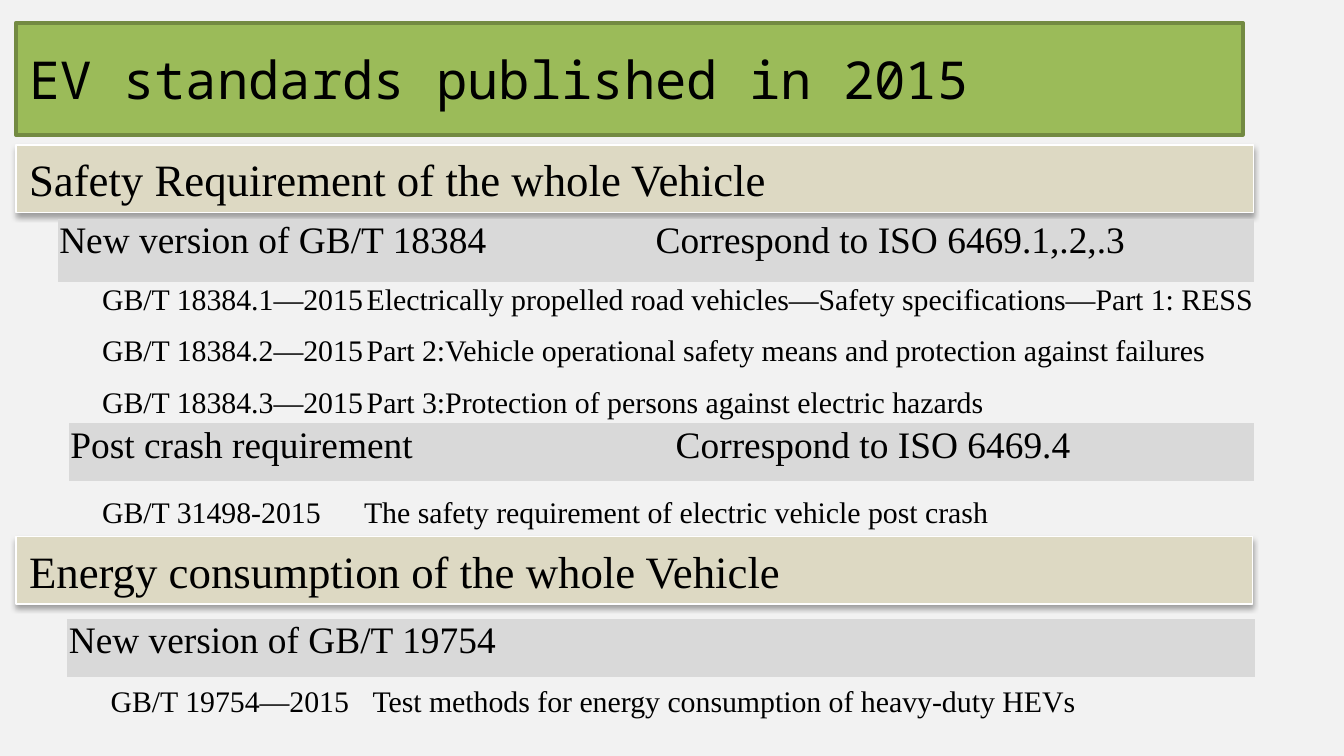
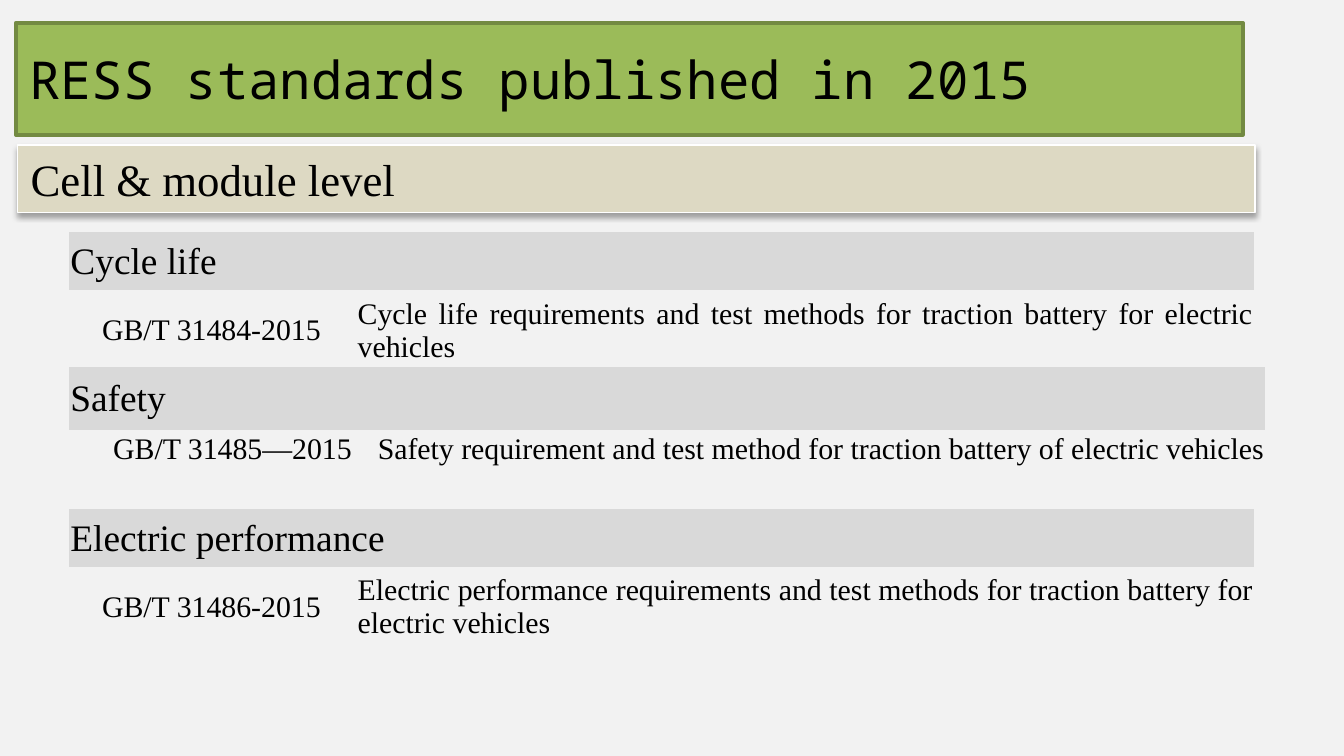
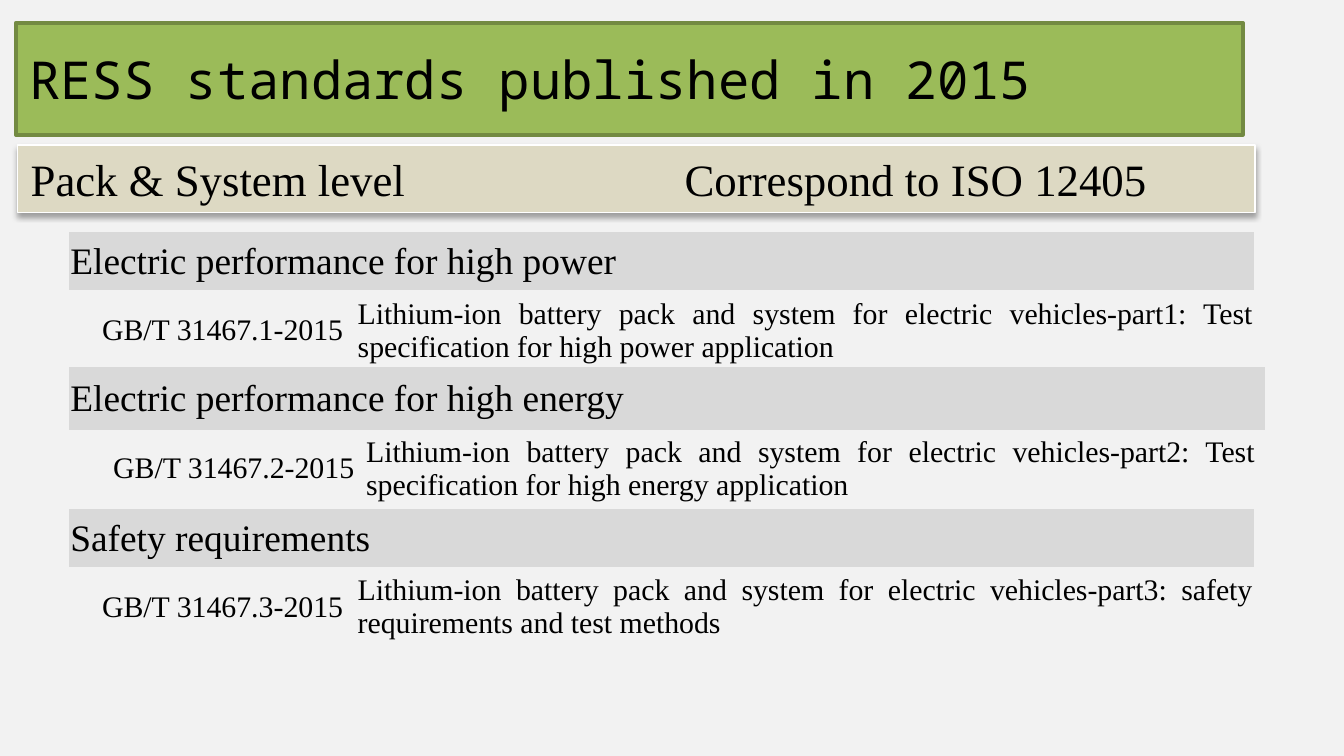
import pptx
import pptx.util
import pptx.dml.color
import pptx.enum.shapes
import pptx.enum.text
import pptx.oxml
import pptx.oxml.ns

Cm = pptx.util.Cm
Pt = pptx.util.Pt
ALIGN = pptx.enum.text.PP_ALIGN
ANCHOR = pptx.enum.text.MSO_ANCHOR

BACKGROUND = "F2F2F2"
GREEN, GREEN_EDGE = "9BBB59", "738A42"
SAND, WHITE = "DDD9C3", "FFFFFF"
GREY = "D9D9D9"
BLACK = "000000"
TITLE_FONT, BODY_FONT = "Noto Sans Mono", "Times New Roman"
NO_STYLE = "{2D5ABB26-0587-4C30-8999-92F81FD0307C}"
NS = pptx.oxml.ns.nsdecls("a")

# Left, top, width, height of the three headings on a RESS slide, in cm
RESS_HEADINGS = [(1.3, 4.39, 22.4, 1.09), (1.3, 6.93, 22.6, 1.19), (1.3, 9.63, 22.4, 1.09)]
RESS_COLS = (4.83, 16.99)


def rgb(value):
    return pptx.dml.color.RGBColor.from_string(value)


def paint(shape, fill, line, width):
    shape.fill.solid()
    shape.fill.fore_color.rgb = rgb(fill)
    shape.line.color.rgb = rgb(line)
    shape.line.width = Pt(width)


def write(tf, text, size, font=BODY_FONT, align=ALIGN.LEFT, tab=None):
    """Put one paragraph in a frame; tab is the stop (cm) of its second part."""
    p = tf.paragraphs[0]
    p.text = text
    p.alignment = align
    if tab:
        p._p.get_or_add_pPr().append(pptx.oxml.parse_xml(
            f'<a:tabLst {NS}><a:tab pos="{Cm(tab)}" algn="l"/></a:tabLst>'))
    for r in p.runs:
        r.font.size = Pt(size)
        r.font.name = font
        r.font.color.rgb = rgb(BLACK)


def fit_frame(tf):
    tf.word_wrap = True
    tf.auto_size = pptx.enum.text.MSO_AUTO_SIZE.SHAPE_TO_FIT_TEXT
    tf.vertical_anchor = ANCHOR.MIDDLE


def add_titled_slide(prs, text):
    s = prs.slides.add_slide(prs.slide_layouts[5])
    title = s.shapes.title
    title.left, title.top, title.width, title.height = Cm(0.3), Cm(0.69), Cm(23.19), Cm(1.6)
    title._element.spPr.xfrm.addnext(pptx.oxml.parse_xml(
        f'<a:prstGeom {NS} prst="roundRect"><a:avLst/></a:prstGeom>'))
    paint(title, GREEN, GREEN_EDGE, 2)
    fit_frame(title.text_frame)
    write(title.text_frame, text, 28, TITLE_FONT)
    return s


def add_band(s, left, top, width, text, tab=None):
    sp = s.shapes.add_shape(pptx.enum.shapes.MSO_SHAPE.RECTANGLE,
                            Cm(left), Cm(top), Cm(width), Cm(1.28))
    paint(sp, SAND, WHITE, 0.75)
    sp.shadow.inherit = False
    effects = sp._element.spPr.find(pptx.oxml.ns.qn("a:effectLst"))
    effects.append(pptx.oxml.parse_xml(
        f'<a:outerShdw {NS} blurRad="{Pt(3.1)}" dist="{Pt(1.8)}" dir="5400000" rotWithShape="0">'
        f'<a:srgbClr val="{BLACK}"><a:alpha val="35000"/></a:srgbClr></a:outerShdw>'))
    fit_frame(sp.text_frame)
    write(sp.text_frame, text, 24, tab=tab)


def add_plain_table(s, left, top, cols, rows):
    """Add a table without style from column widths and row heights in cm."""
    table = s.shapes.add_table(len(rows), len(cols), Cm(left), Cm(top),
                               Cm(sum(cols)), Cm(sum(rows))).table
    table.first_row = table.horz_banding = False
    table._tbl.tblPr.find(pptx.oxml.ns.qn("a:tableStyleId")).text = NO_STYLE
    for column, width in zip(table.columns, cols):
        column.width = Cm(width)
    for row, height in zip(table.rows, rows):
        row.height = Cm(height)
    for cell in table.iter_cells():
        cell.margin_left = cell.margin_right = cell.margin_top = Cm(0.03)
        cell.margin_bottom = 0
        cell.fill.background()
    return table


def add_heading(s, box, text, anchor=ANCHOR.MIDDLE, tab=None):
    left, top, width, height = box
    cell = add_plain_table(s, left, top, [width], [height]).cell(0, 0)
    cell.fill.solid()
    cell.fill.fore_color.rgb = rgb(GREY)
    cell.vertical_anchor = anchor
    write(cell.text_frame, text, 20, tab=tab)


def add_standards(s, left, top, cols, rows, entries, anchor=ANCHOR.MIDDLE):
    """List standards as rows of number and name."""
    table = add_plain_table(s, left, top, cols, rows)
    number_align = ALIGN.LEFT if anchor == ANCHOR.MIDDLE else ALIGN.JUSTIFY
    for i, entry in enumerate(entries):
        for j, (text, align) in enumerate(zip(entry, (number_align, ALIGN.JUSTIFY))):
            cell = table.cell(i, j)
            cell.vertical_anchor = anchor
            write(cell.text_frame, text, 16, align=align)


def ev_slide(prs):
    s = add_titled_slide(prs, "EV standards published in 2015")
    add_band(s, 0.3, 2.74, 23.39, "Safety Requirement of the whole Vehicle")
    add_heading(s, (1.09, 4.14, 22.6, 1.19),
                "New version of GB/T 18384\tCorrespond to ISO 6469.1,.2,.3", ANCHOR.TOP, 11.27)
    add_standards(s, 1.9, 5.33, (5, 17.6), (0.97, 0.99, 0.69), [
        ("GB/T 18384.1—2015",
         "Electrically propelled road vehicles—Safety specifications—Part 1: RESS"),
        ("GB/T 18384.2—2015",
         "Part 2:Vehicle operational safety means and protection against failures"),
        ("GB/T 18384.3—2015", "Part 3:Protection of persons against electric hazards"),
    ], ANCHOR.TOP)
    add_heading(s, (1.3, 8, 22.4, 1.09),
                "Post crash requirement\tCorrespond to ISO 6469.4", ANCHOR.TOP, 11.44)
    add_standards(s, 1.9, 9.14, (4.95, 17.42), [1.09], [
        ("GB/T 31498-2015", "The safety requirement of electric vehicle post crash")])
    add_band(s, 0.3, 10.14, 23.37, "Energy consumption of the whole Vehicle")
    add_heading(s, (1.27, 11.7, 22.45, 1.09), "New version of GB/T 19754", ANCHOR.TOP)
    add_standards(s, 2.06, 12.93, (4.95, 17.48), [1.3], [
        ("GB/T 19754—2015", "Test methods for energy consumption of heavy-duty HEVs")],
        ANCHOR.TOP)


def ress_slide(prs, level, headings, tab=None):
    s = add_titled_slide(prs, "RESS standards published in 2015")
    add_band(s, 0.33, 2.74, 23.39, level, tab)
    for box, text in zip(RESS_HEADINGS, headings):
        add_heading(s, box, text)
    return s


def cell_slide(prs):
    s = ress_slide(prs, "Cell & module level", ["Cycle life", "Safety", "Electric performance"])
    add_standards(s, 1.9, 5.54, RESS_COLS, [1.37], [
        ("GB/T 31484-2015",
         "Cycle life requirements and test methods for traction battery for electric vehicles")])
    add_standards(s, 2.11, 8.15, (5, 17.6), [0.97], [
        ("GB/T 31485—2015",
         "Safety requirement and test method for traction battery of electric vehicles")],
        ANCHOR.TOP)
    add_standards(s, 1.9, 10.77, RESS_COLS, [1.37], [
        ("GB/T 31486-2015", "Electric performance requirements and test methods "
                            "for traction battery for electric vehicles")])


def pack_slide(prs):
    s = ress_slide(prs, "Pack & System level\tCorrespond to ISO 12405",
                   ["Electric performance for high power", "Electric performance for high energy",
                    "Safety requirements"], 12.36)
    parts = [
        (1.9, 5.54, RESS_COLS, [1.37, 1.09], "Test specification for high power application"),
        (2.11, 8.15, (4.78, 16.87), [1.37], "Test specification for high energy application"),
        (1.9, 10.77, RESS_COLS, [1.37], "safety requirements and test methods"),
    ]
    for n, (left, top, cols, rows, scope) in enumerate(parts, 1):
        name = f"Lithium-ion battery pack and system for electric vehicles-part{n}: {scope}"
        add_standards(s, left, top, cols, rows, [(f"GB/T 31467.{n}-2015", name)])


def main():
    prs = pptx.Presentation()
    prs.slide_width, prs.slide_height = Cm(25.4), Cm(14.29)
    fill = prs.slide_master.background.fill
    fill.solid()
    fill.fore_color.rgb = rgb(BACKGROUND)
    ev_slide(prs)
    cell_slide(prs)
    pack_slide(prs)
    prs.save("out.pptx")


if __name__ == "__main__":
    main()
